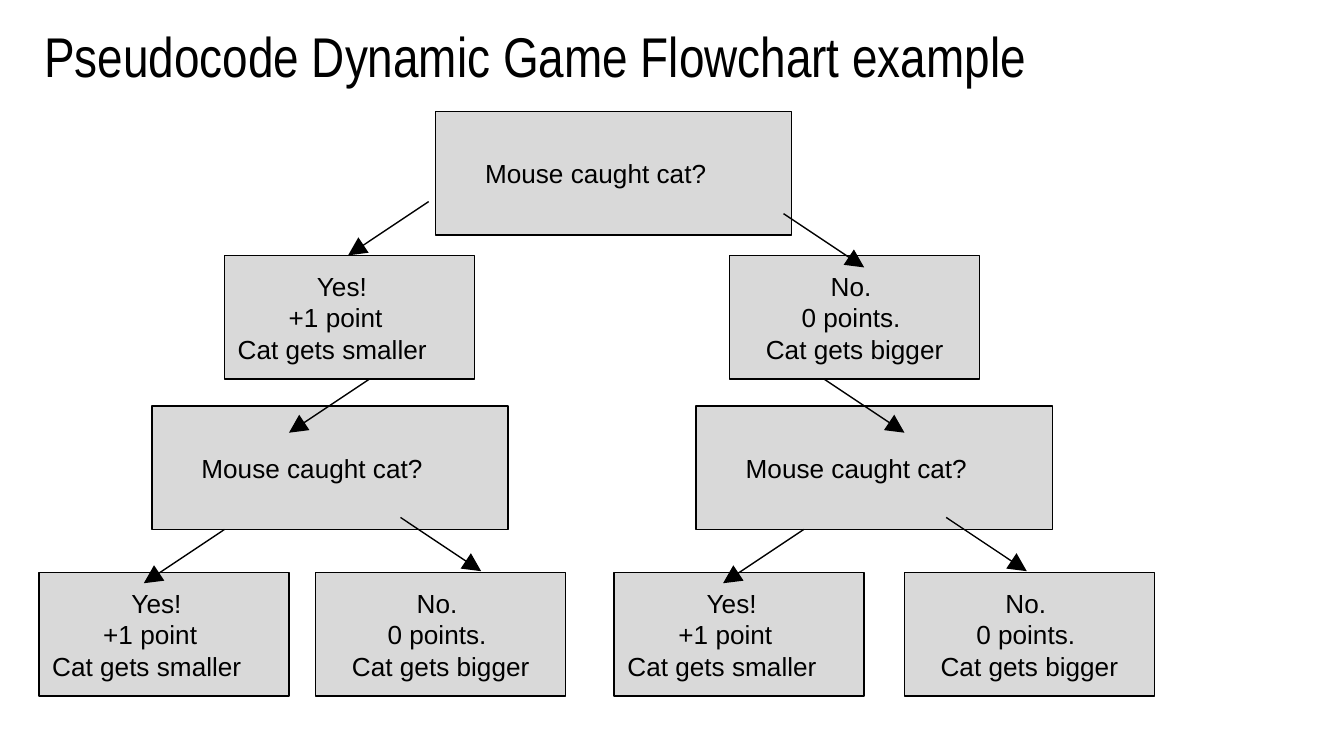
import pptx
import pptx.dml.color
import pptx.enum.shapes
import pptx.enum.text
import pptx.oxml.ns
import pptx.util
from lxml import etree

Inches = pptx.util.Inches
ALIGN = pptx.enum.text.PP_ALIGN
ANCHOR = pptx.enum.text.MSO_ANCHOR
COLORS = {"text": "000000", "line": "000000", "box": "D9D9D9"}
BOX_HEIGHT = 0.92
QUESTION_WIDTH, OUTCOME_WIDTH = 2.65, 1.86

QUESTION = [("Mouse caught cat?", 0.27)]
YES = [("Yes!", 0.59), ("+1 point", 0.38), ("Cat gets smaller", 0)]
NO = [("No. ", 0), ("0 points. ", 0), ("Cat gets bigger", 0)]

QUESTIONS = [(3.24, 0.83), (1.13, 3.02), (5.18, 3.02)]
YES_BOXES = [(1.67, 1.9), (0.29, 4.26), (4.57, 4.26)]
NO_BOXES = [(5.43, 1.9), (2.35, 4.26), (6.73, 4.26)]

ARROW_DX, ARROW_DY = 0.6, 0.4
LEFT_ARROWS = [(3.19, 1.5), (2.75, 2.82), (1.67, 3.94), (5.98, 3.94)]
RIGHT_ARROWS = [(5.83, 1.59), (6.13, 2.82), (7.04, 3.85), (2.98, 3.85)]


def rgb(name):
    return pptx.dml.color.RGBColor.from_string(COLORS[name])


def write_text(sp, lines, size=14, font="Arial", align=ALIGN.LEFT, anchor=ANCHOR.MIDDLE):
    tf = sp.text_frame
    tf.word_wrap = True
    tf.vertical_anchor = anchor
    tf.margin_left = tf.margin_right = tf.margin_top = tf.margin_bottom = Inches(0.1)
    for i, (text, indent) in enumerate(lines):
        p = tf.add_paragraph() if i else tf.paragraphs[0]
        p.alignment = align
        if indent:
            p._p.get_or_add_pPr().set("marL", str(Inches(indent)))
        r = p.add_run()
        r.text = text
        r.font.size = pptx.util.Pt(size)
        r.font.name = font
        r.font.color.rgb = rgb("text")


def add_title(s, text):
    sp = s.shapes.add_textbox(Inches(0.23), Inches(0.06), Inches(9.32), Inches(0.63))
    write_text(sp, [(text, 0)], size=30, font="Arial Narrow", anchor=ANCHOR.TOP)


def add_box(s, left, top, width, lines, align=ALIGN.LEFT):
    sp = s.shapes.add_shape(pptx.enum.shapes.MSO_SHAPE.RECTANGLE, Inches(left),
                            Inches(top), Inches(width), Inches(BOX_HEIGHT))
    sp.shadow.inherit = False
    sp.fill.solid()
    sp.fill.fore_color.rgb = rgb("box")
    sp.line.color.rgb = rgb("line")
    sp.line.width = pptx.util.Pt(0.75)
    write_text(sp, lines, align=align)


def add_arrow(s, x, y, dx):
    sp = s.shapes.add_connector(pptx.enum.shapes.MSO_CONNECTOR.STRAIGHT, Inches(x),
                                Inches(y), Inches(x + dx), Inches(y + ARROW_DY))
    sp.line.color.rgb = rgb("line")
    sp.line.width = pptx.util.Pt(0.75)
    qn = pptx.oxml.ns.qn
    etree.SubElement(sp.line._get_or_add_ln(), qn("a:tailEnd"),
                     type="triangle", w="lg", len="lg")
    etree.SubElement(sp._element.spPr, qn("a:effectLst"))


def main():
    prs = pptx.Presentation()
    prs.slide_width = Inches(10)
    prs.slide_height = prs.slide_width * 9 // 16
    s = prs.slides.add_slide(prs.slide_layouts[6])

    add_title(s, "Pseudocode Dynamic Game Flowchart example")
    for left, top in QUESTIONS:
        add_box(s, left, top, QUESTION_WIDTH, QUESTION)
    for left, top in YES_BOXES:
        add_box(s, left, top, OUTCOME_WIDTH, YES)
    for left, top in NO_BOXES:
        add_box(s, left, top, OUTCOME_WIDTH, NO, align=ALIGN.CENTER)
    for x, y in LEFT_ARROWS:
        add_arrow(s, x, y, -ARROW_DX)
    for x, y in RIGHT_ARROWS:
        add_arrow(s, x, y, ARROW_DX)

    prs.save("out.pptx")


if __name__ == "__main__":
    main()
